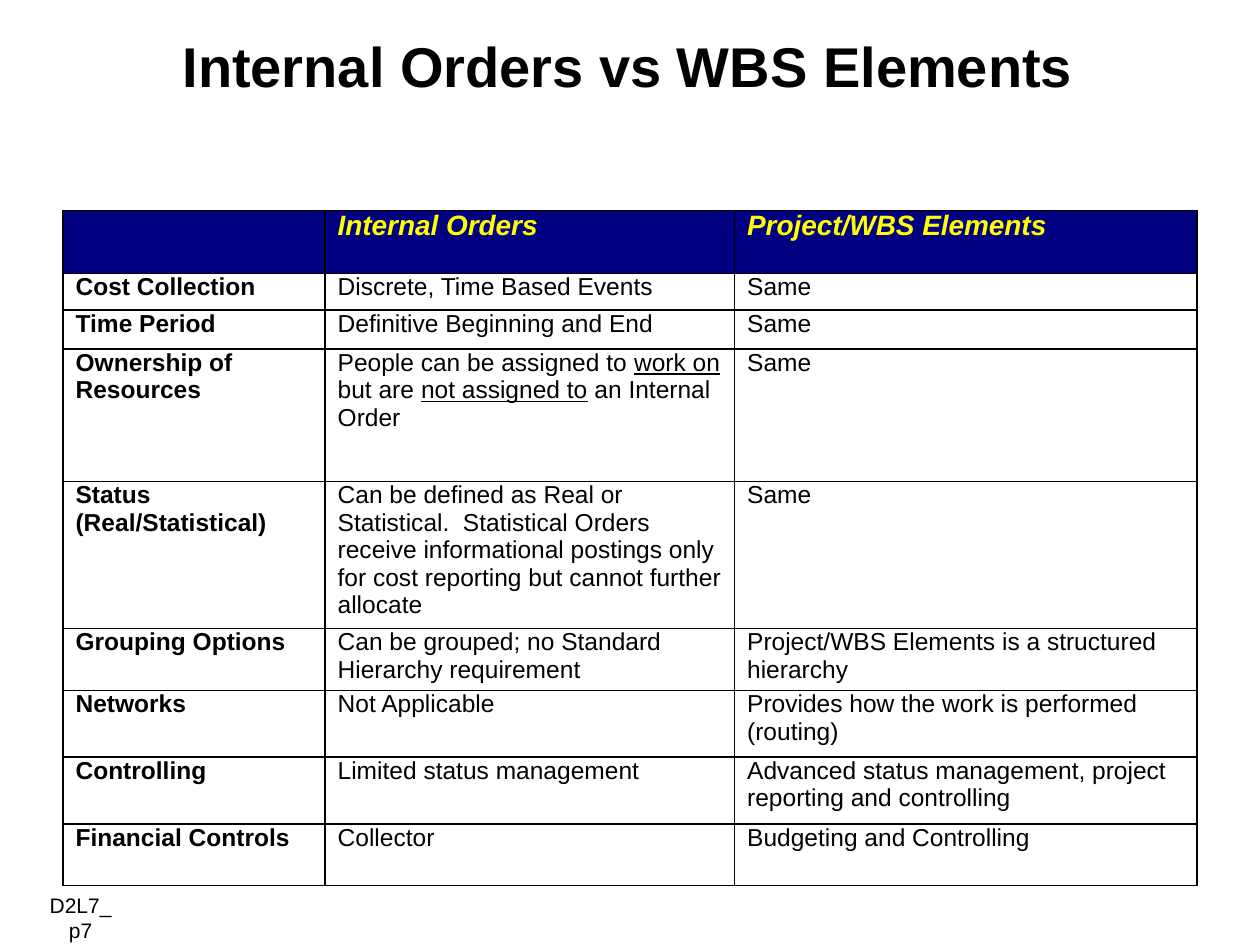
from pptx import Presentation
from pptx.dml.color import RGBColor
from pptx.enum.text import MSO_ANCHOR, MSO_AUTO_SIZE, PP_ALIGN
from pptx.oxml import parse_xml
from pptx.oxml.ns import nsdecls
from pptx.util import Inches, Pt

COLORS = {"text": "000000", "header_fill": "000080", "header_text": "FFFF00", "border": "000000"}

COLUMN_WIDTHS = [2.08, 3.25, 3.67]
ROW_HEIGHTS = [0.5, 0.29, 0.31, 1.05, 1.17, 0.49, 0.53, 0.53, 0.49]

# Each cell is a list of text runs; every second run is underlined
ROWS = [
    [[], ["Internal Orders"], ["Project/WBS Elements"]],
    [["Cost Collection"], ["Discrete, Time Based Events"], ["Same"]],
    [["Time Period"], ["Definitive Beginning and End"], ["Same"]],
    [["Ownership of Resources"],
     ["People can be assigned to ", "work on", " but are ", "not assigned to", " an Internal Order"],
     ["Same"]],
    [["Status (Real/Statistical)"],
     ["Can be defined as Real or Statistical.  Statistical Orders receive informational "
      "postings only for cost reporting but cannot further allocate"],
     ["Same"]],
    [["Grouping Options"], ["Can be grouped; no Standard Hierarchy requirement"],
     ["Project/WBS Elements is a structured hierarchy"]],
    [["Networks"], ["Not Applicable"], ["Provides how the work is performed (routing)"]],
    [["Controlling"], ["Limited status management"],
     ["Advanced status management, project reporting and controlling"]],
    [["Financial Controls"], ["Collector"], ["Budgeting and Controlling"]],
]


def set_font(font, size, color="text", bold=False, italic=False):
    font.name = "Arial"
    font.size = Pt(size)
    font.bold = bold
    font.italic = italic
    font.color.rgb = RGBColor.from_string(COLORS[color])


def fill_frame(tf, text, size, bold=False):
    tf.word_wrap = True
    tf.auto_size = MSO_AUTO_SIZE.NONE
    tf.vertical_anchor = MSO_ANCHOR.TOP
    tf.margin_left = tf.margin_right = Inches(0.1)
    tf.margin_top = tf.margin_bottom = 0
    p = tf.paragraphs[0]
    p.text = text
    p.alignment = PP_ALIGN.CENTER
    p.line_spacing = 1.0
    p.space_before = Pt(0)
    set_font(p.font, size, bold=bold)


def add_title(slide, left, top, width, height):
    title = slide.shapes.title
    title.left, title.top, title.width, title.height = left, top, width, height
    fill_frame(title.text_frame, "Internal Orders vs WBS Elements", 32, bold=True)


def set_borders(cell):
    tc_pr = cell._tc.get_or_add_tcPr()
    for i, side in enumerate(("lnL", "lnR", "lnT", "lnB")):
        tc_pr.insert(i, parse_xml(
            f'<a:{side} {nsdecls("a")} w="{Pt(1)}"><a:solidFill>'
            f'<a:srgbClr val="{COLORS["border"]}"/></a:solidFill></a:{side}>'))


def fill_cell(cell, runs, is_header, is_label):
    cell.margin_left = cell.margin_right = Inches(0.1)
    cell.margin_top = cell.margin_bottom = 0
    if is_header:
        cell.fill.solid()
        cell.fill.fore_color.rgb = RGBColor.from_string(COLORS["header_fill"])
    else:
        cell.fill.background()
    set_borders(cell)
    p = cell.text_frame.paragraphs[0]
    if is_header:
        set_font(p.font, 16, "header_text", bold=True, italic=True)
    else:
        set_font(p.font, 14, bold=is_label)
    for i, text in enumerate(runs):
        r = p.add_run()
        r.text = text
        if i % 2:
            r.font.underline = True


def add_comparison_table(slide, left, top, width, height):
    frame = slide.shapes.add_table(len(ROWS), len(COLUMN_WIDTHS), left, top, width, height)
    table = frame.table
    table.horz_banding = False
    for column, column_width in zip(table.columns, COLUMN_WIDTHS):
        column.width = Inches(column_width)
    for i, (row, row_height) in enumerate(zip(table.rows, ROW_HEIGHTS)):
        row.height = Inches(row_height)
        for j, cell in enumerate(row.cells):
            fill_cell(cell, ROWS[i][j], is_header=i == 0, is_label=j == 0)


def add_page_label(slide, left, top, width, height):
    box = slide.shapes.add_textbox(left, top, width, height)
    fill_frame(box.text_frame, "D2L7_p7", 12)


def main():
    prs = Presentation()
    prs.slide_width, prs.slide_height = Inches(10), Inches(7.5)
    slide = prs.slides.add_slide(prs.slide_layouts[5])
    add_title(slide, Inches(1.32), Inches(0.25), Inches(7.33), Inches(0.53))
    add_comparison_table(slide, Inches(0.5), Inches(1.67),
                         Inches(sum(COLUMN_WIDTHS)), Inches(sum(ROW_HEIGHTS)))
    add_page_label(slide, Inches(0.25), Inches(7.08), Inches(0.78), Inches(0.2))
    prs.save("out.pptx")


if __name__ == "__main__":
    main()
